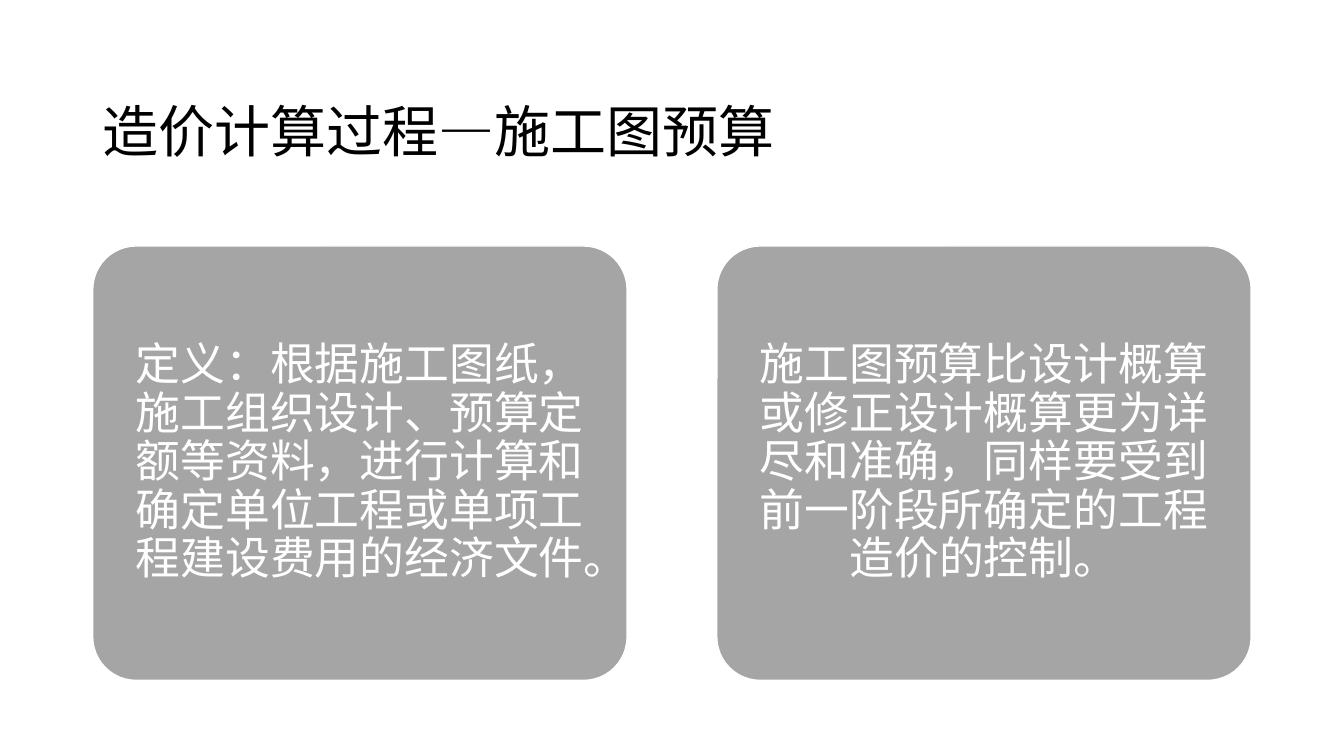
from pptx import Presentation
from pptx.dml.color import RGBColor
from pptx.enum.shapes import MSO_SHAPE
from pptx.enum.text import MSO_ANCHOR, PP_ALIGN
from pptx.oxml.ns import qn
from pptx.util import Inches, Pt

TITLE = "造价计算过程—施工图预算"
CARDS = [
    "定义：根据施工图纸，施工组织设计、预算定额等资料，进行计算和确定单位工程或单项工程建设费用的经济文件。",
    "施工图预算比设计概算或修正设计概算更为详尽和准确，同样要受到前一阶段所确定的工程造价的控制。",
]

BLACK = RGBColor(0x00, 0x00, 0x00)
WHITE = RGBColor(0xFF, 0xFF, 0xFF)
GRAY = RGBColor(0xA5, 0xA5, 0xA5)
CJK_FONT = "Noto Sans CJK SC"
TITLE_FONT = "Times New Roman"

SLIDE_W, SLIDE_H = 13.33, 7.5
MARGIN = 0.92
CONTENT_W = SLIDE_W - 2 * MARGIN
TITLE_TOP, TITLE_H = 0.4, 1.45
CARD_TOP, CARD_H = 2.44, 4.31
CARD_GAP = 0.89
CARD_W = (CONTENT_W - CARD_GAP * (len(CARDS) - 1)) / len(CARDS)
CARD_INSET = 0.13


def write(tf, text, size, latin, color, align, spacing):
    tf.word_wrap = True
    tf.vertical_anchor = MSO_ANCHOR.MIDDLE
    p = tf.paragraphs[0]
    p.alignment = align
    p.line_spacing = spacing
    r = p.add_run()
    r.text = text
    r.font.size = Pt(size)
    r.font.name = latin
    r.font.color.rgb = color
    # East Asian glyphs take their typeface from a:ea
    latin_tag = r.font._element.find(qn("a:latin"))
    ea = latin_tag.makeelement(qn("a:ea"), {"typeface": CJK_FONT})
    latin_tag.addnext(ea)


def add_card(s, column, text):
    left = MARGIN + column * (CARD_W + CARD_GAP)
    card = s.shapes.add_shape(
        MSO_SHAPE.ROUNDED_RECTANGLE,
        Inches(left), Inches(CARD_TOP), Inches(CARD_W), Inches(CARD_H))
    card.adjustments[0] = 0.1
    card.shadow.inherit = False
    card.fill.solid()
    card.fill.fore_color.rgb = GRAY
    card.line.color.rgb = WHITE
    card.line.width = Pt(1)
    tf = card.text_frame
    tf.margin_left = tf.margin_right = Inches(CARD_INSET)
    tf.margin_top = tf.margin_bottom = Inches(CARD_INSET)
    write(tf, text, 32, CJK_FONT, WHITE, PP_ALIGN.CENTER, 0.9)


def main():
    prs = Presentation()
    prs.slide_width, prs.slide_height = Inches(SLIDE_W), Inches(SLIDE_H)
    s = prs.slides.add_slide(prs.slide_layouts[5])

    title = s.shapes.title
    title.left, title.top = Inches(MARGIN), Inches(TITLE_TOP)
    title.width, title.height = Inches(CONTENT_W), Inches(TITLE_H)
    write(title.text_frame, TITLE, 40, TITLE_FONT, BLACK, PP_ALIGN.LEFT, 1.5)

    for column, text in enumerate(CARDS):
        add_card(s, column, text)
    prs.save("out.pptx")


if __name__ == "__main__":
    main()
